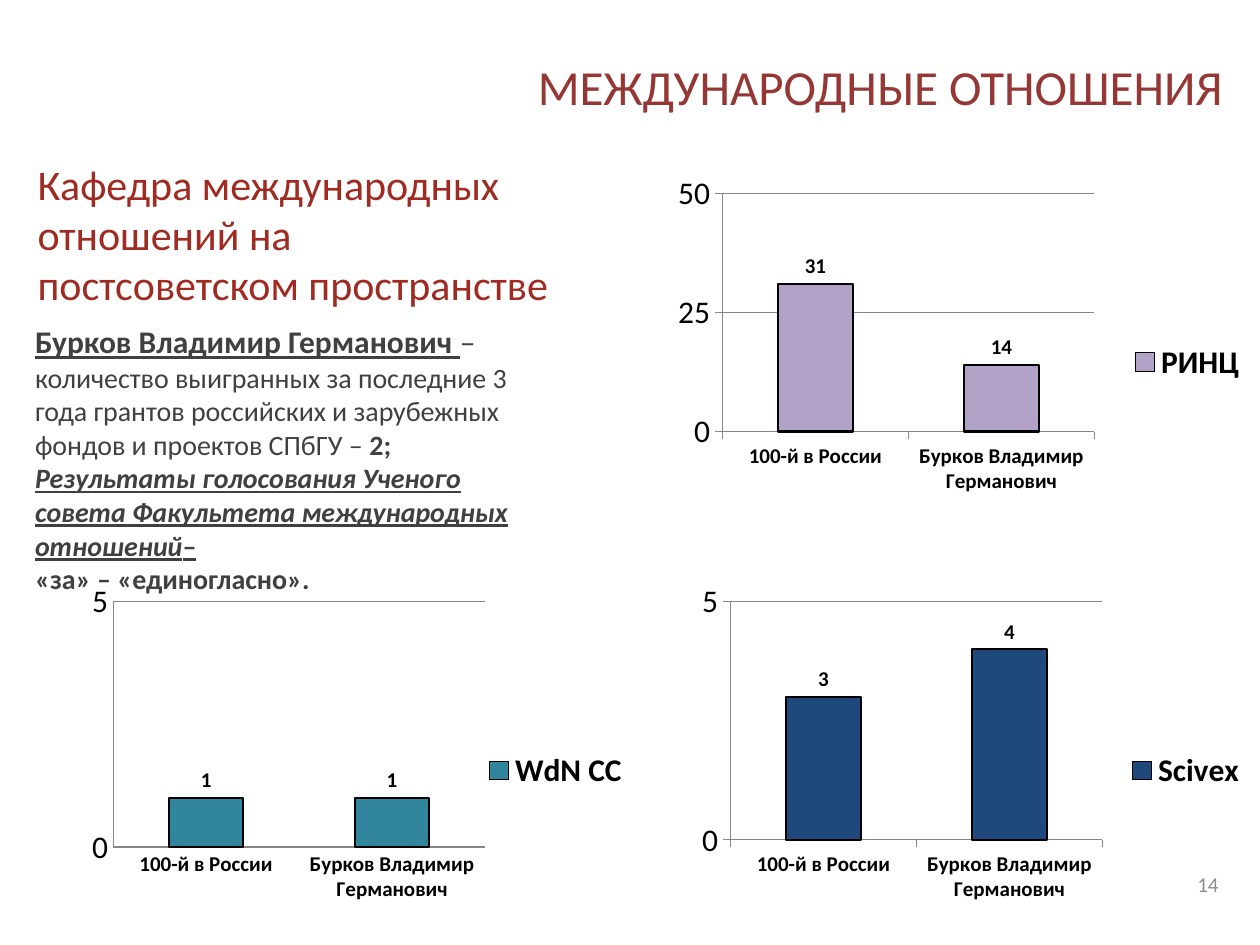
from lxml import etree
from pptx import Presentation
from pptx import util as u
from pptx.chart.data import CategoryChartData
from pptx.dml.color import RGBColor
from pptx.enum import chart as charts, text
from pptx.oxml import ns

WIDTH, HEIGHT = 10, 7.5
LEFT, RIGHT = 0.18, 5.08
UPPER, LOWER = 1.3, 4.54
CHART_WIDTH, CHART_HEIGHT = 4.92, 3.15
HEADING_WIDTH, COLUMN_WIDTH = 4.3, 4.25

presentation = Presentation()
presentation.slide_width = u.Inches(WIDTH)
presentation.slide_height = u.Inches(HEIGHT)
slide = presentation.slides.add_slide(presentation.slide_layouts[6])


def color(value):
    return RGBColor.from_string(value)


def add_text(box, paragraphs, fill, anchor=text.MSO_ANCHOR.MIDDLE, align=text.PP_ALIGN.LEFT):
    """Each paragraph is a list of runs: (words, size, styles), styles from "b", "i", "u"."""
    frame = slide.shapes.add_textbox(*map(u.Inches, box)).text_frame
    frame.word_wrap = True
    frame.vertical_anchor = anchor
    for index, runs in enumerate(paragraphs):
        paragraph = frame.paragraphs[0] if index == 0 else frame.add_paragraph()
        paragraph.alignment = align
        for words, size, styles in runs:
            run = paragraph.add_run()
            run.text = words
            font = run.font
            font.name, font.size = "Calibri", u.Pt(size)
            font.color.rgb = color(fill)
            font.bold, font.italic, font.underline = (s in styles for s in "biu")


add_text((2.56, 0.3, 7.24, 0.77), [[("МЕЖДУНАРОДНЫЕ ОТНОШЕНИЯ", 28, "")]],
         "953735", align=text.PP_ALIGN.RIGHT)

# Charts: name, values, colour, left, top, axis step, axis maximum, ticks, inner plot area
outside, no_ticks = charts.XL_TICK_MARK.OUTSIDE, charts.XL_TICK_MARK.NONE
indexes = [
    ("Scivex", (3, 4), "1F497D", RIGHT, LOWER, 5, 5, outside, (0.146, 0.075, 0.6, 0.6)),
    ("WdN CC", (1, 1), "31859C", LEFT, LOWER, 5, 5, no_ticks, (0.146, 0.075, 0.6, 0.618)),
    ("РИНЦ", (31, 14), "B3A2C7", RIGHT, UPPER, 25, 50, outside, (0.133, 0.075, 0.6, 0.6)),
]
for name, values, fill, left, top, step, maximum, ticks, plot_area in indexes:
    data = CategoryChartData(number_format="General")
    data.categories = ["100-й в России", "Бурков Владимир Германович"]
    data.add_series(name, values)
    chart = slide.shapes.add_chart(
        charts.XL_CHART_TYPE.COLUMN_CLUSTERED,
        *map(u.Inches, (left, top, CHART_WIDTH, CHART_HEIGHT)), data).chart
    chart.has_title = False
    chart.font.name, chart.font.size = "Calibri", u.Pt(18)
    chart.font.color.rgb = color("000000")

    chart.has_legend = True
    chart.legend.position = charts.XL_LEGEND_POSITION.RIGHT
    chart.legend.include_in_layout = False
    chart.legend.font.bold = True

    for axis in (chart.category_axis, chart.value_axis):
        axis.major_tick_mark = ticks
        axis.minor_tick_mark = no_ticks
        axis.format.line.color.rgb = color("868686")
        axis.format.line.width = u.Pt(0.75)
    chart.category_axis.tick_labels.font.size = u.Pt(12)
    chart.category_axis.tick_labels.font.bold = True
    value_axis = chart.value_axis
    value_axis.minimum_scale, value_axis.maximum_scale = 0, maximum
    value_axis.major_unit = step
    value_axis.has_major_gridlines = True
    value_axis.major_gridlines.format.line.color.rgb = color("868686")
    value_axis.major_gridlines.format.line.width = u.Pt(0.75)

    plot = chart.plots[0]
    plot.gap_width = 150
    plot.vary_by_categories = False
    series = plot.series[0]
    series.format.fill.solid()
    series.format.fill.fore_color.rgb = color(fill)
    series.format.line.color.rgb = color("000000")
    series.format.line.width = u.Pt(1.25)
    labels = series.data_labels
    labels.show_value = True
    labels.position = charts.XL_LABEL_POSITION.OUTSIDE_END
    labels.font.size, labels.font.bold = u.Pt(12), True

    area = chart.element.find(".//" + ns.qn("c:plotArea"))
    for old in area.findall(ns.qn("c:layout")):
        area.remove(old)
    layout = etree.Element(ns.qn("c:layout"))
    manual = etree.SubElement(layout, ns.qn("c:manualLayout"))
    settings = [("layoutTarget", "inner"), ("xMode", "edge"), ("yMode", "edge"),
                *zip("xywh", plot_area)]
    for tag, value in settings:
        etree.SubElement(manual, ns.qn("c:" + tag)).set("val", str(value))
    area.insert(0, layout)

add_text((7.44, 6.82, 2.33, 0.4), [[("14", 12, "")]], "8C8C8C", align=text.PP_ALIGN.RIGHT)
add_text((0.2, 1.2, HEADING_WIDTH, 1.31),
         [[("Кафедра международных отношений на постсоветском пространстве", 24, "")]], "9F2B22")
add_text((LEFT, 2.51, COLUMN_WIDTH, 2.59), [
    [("Бурков Владимир Германович ", 18, "bu"), ("–", 18, "")],
    [("количество выигранных за последние 3 года грантов российских и зарубежных "
      "фондов и проектов СПбГУ – ", 16, ""), ("2;", 16, "b")],
    [("Результаты голосования Ученого совета Факультета международных отношений", 16, "biu"),
     ("–", 16, "bu")],
    [("«за» – «единогласно».", 16, "b")],
], "404040", anchor=text.MSO_ANCHOR.TOP)

presentation.save("out.pptx")
